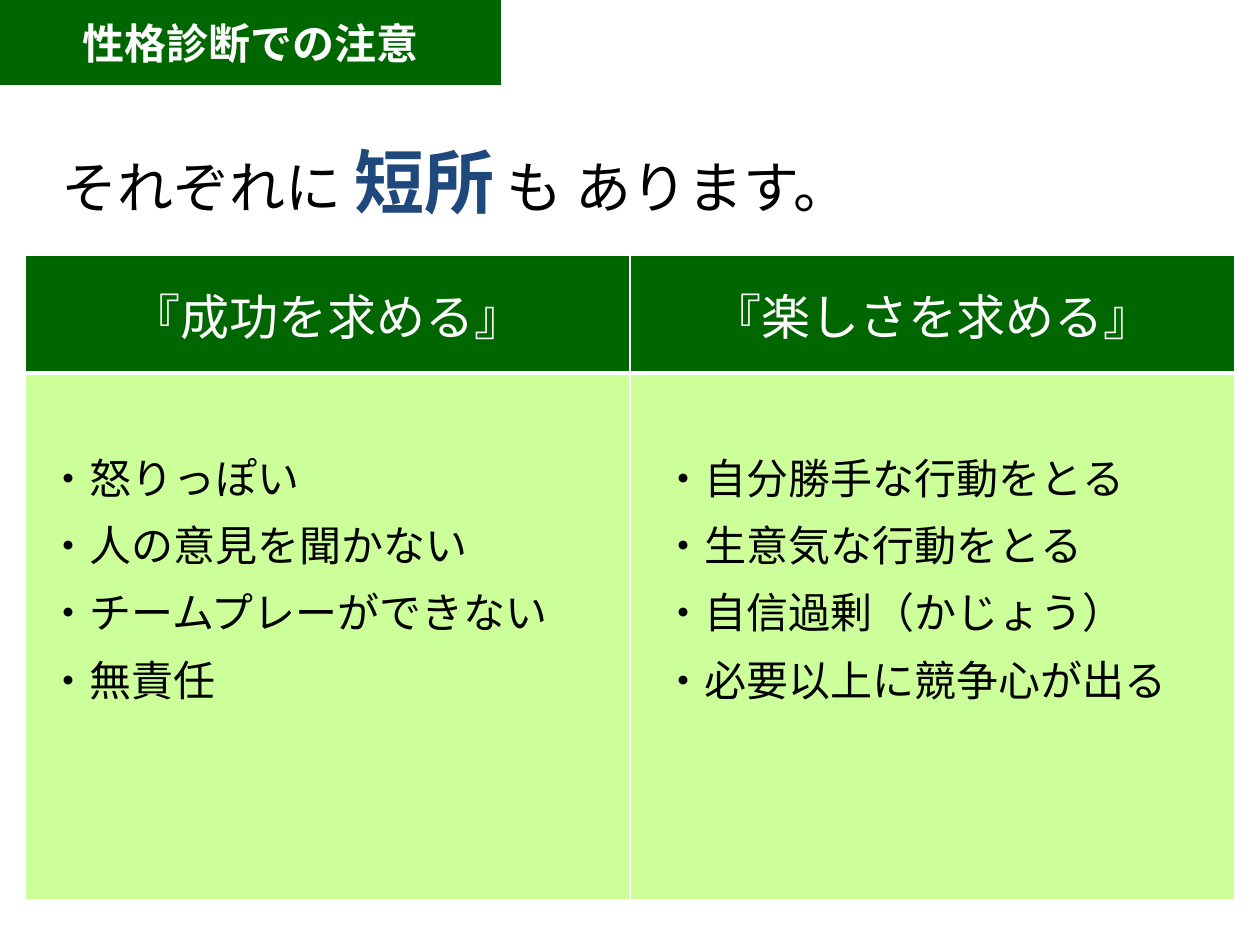
from lxml.etree import SubElement
from pptx import Presentation
from pptx.dml.color import RGBColor
from pptx.enum.shapes import MSO_SHAPE
from pptx.enum.text import MSO_ANCHOR, PP_ALIGN
from pptx.oxml.ns import qn
from pptx.util import Pt

SCALE = 914400 / 126
THEME = {
    "font": "Noto Sans CJK JP",
    "green": "006600", "light": "CCFF99", "white": "FFFFFF",
    "black": "000000", "blue": "1F497D",
    "body": 24, "header": 28, "lead": 32, "emphasis": 40,
}


def px(*lengths):
    return [round(length * SCALE) for length in lengths]


def write(paragraph, text, size, color, bold=False):
    run = paragraph.add_run()
    run.text = text
    font_format = {"name": THEME["font"], "size": Pt(THEME[size]), "bold": bold}
    for key, value in font_format.items():
        setattr(run.font, key, value)
    run.font.color.rgb = RGBColor.from_string(THEME[color])
    SubElement(run.font._element, qn("a:ea"), typeface=THEME["font"])


prs = Presentation()
prs.slide_width, prs.slide_height = px(1260, 945)
slide = prs.slides.add_slide(prs.slide_layouts[6])

banner = slide.shapes.add_shape(MSO_SHAPE.RECTANGLE, *px(0, 0, 501, 85))
banner.shadow.inherit = False
banner.fill.solid()
banner.fill.fore_color.rgb = RGBColor.from_string(THEME["green"])
banner.line.fill.background()
banner.text_frame.vertical_anchor = MSO_ANCHOR.MIDDLE
banner_line = banner.text_frame.paragraphs[0]
banner_line.alignment = PP_ALIGN.CENTER
write(banner_line, "性格診断での注意", "body", "white", True)

lead = slide.shapes.add_textbox(*px(49, 125, 1160, 97)).text_frame
lead.word_wrap = True
lead_line = lead.paragraphs[0]
lead_line.line_spacing = Pt(52)
for text, size, color, bold in [
    ("それぞれに ", "lead", "black", False),
    ("短所", "emphasis", "blue", True),
    (" ", "lead", "blue", True),
    ("も あります。", "lead", "black", False),
]:
    write(lead_line, text, size, color, bold)

weaknesses = [
    ("『成功を求める』", (35, 442, 576, 267),
     ["・怒りっぽい", "・人の意見を聞かない", "・チームプレーができない", "・無責任"]),
    ("『楽しさを求める』", (650, 442, 561, 267),
     ["・自分勝手な行動をとる", "・生意気な行動をとる", "・自信過剰（かじょう）",
      "・必要以上に競争心が出る"]),
]

grid = slide.shapes.add_table(2, len(weaknesses), *px(25, 255, 1210, 645)).table
for row, height in zip(grid.rows, px(118, 527)):
    row.height = height
for column in grid.columns:
    column.width = px(605)[0]

for row, fill, bottom in [(0, "green", 3), (1, "light", 1)]:
    for column in range(len(weaknesses)):
        cell = grid.cell(row, column)
        properties = cell._tc.get_or_add_tcPr()
        for side, width in [("L", 1), ("R", 1), ("T", 3 if row else 1), ("B", bottom)]:
            border = SubElement(properties, qn(f"a:ln{side}"), w=str(Pt(width)))
            SubElement(SubElement(border, qn("a:solidFill")), qn("a:srgbClr"), val=THEME["white"])
        cell.fill.solid()
        cell.fill.fore_color.rgb = RGBColor.from_string(THEME[fill])

for column, (heading, area, points) in enumerate(weaknesses):
    header = grid.cell(0, column)
    header.vertical_anchor = MSO_ANCHOR.MIDDLE
    header_line = header.text_frame.paragraphs[0]
    header_line.alignment = PP_ALIGN.CENTER
    write(header_line, heading, "header", "white")

    listing = slide.shapes.add_textbox(*px(*area)).text_frame
    listing.word_wrap = True
    for index, point in enumerate(points):
        line = listing.add_paragraph() if index else listing.paragraphs[0]
        line.line_spacing = Pt(31)
        line.space_after = Pt(7.5)
        write(line, point, "body", "black")

prs.save("out.pptx")
